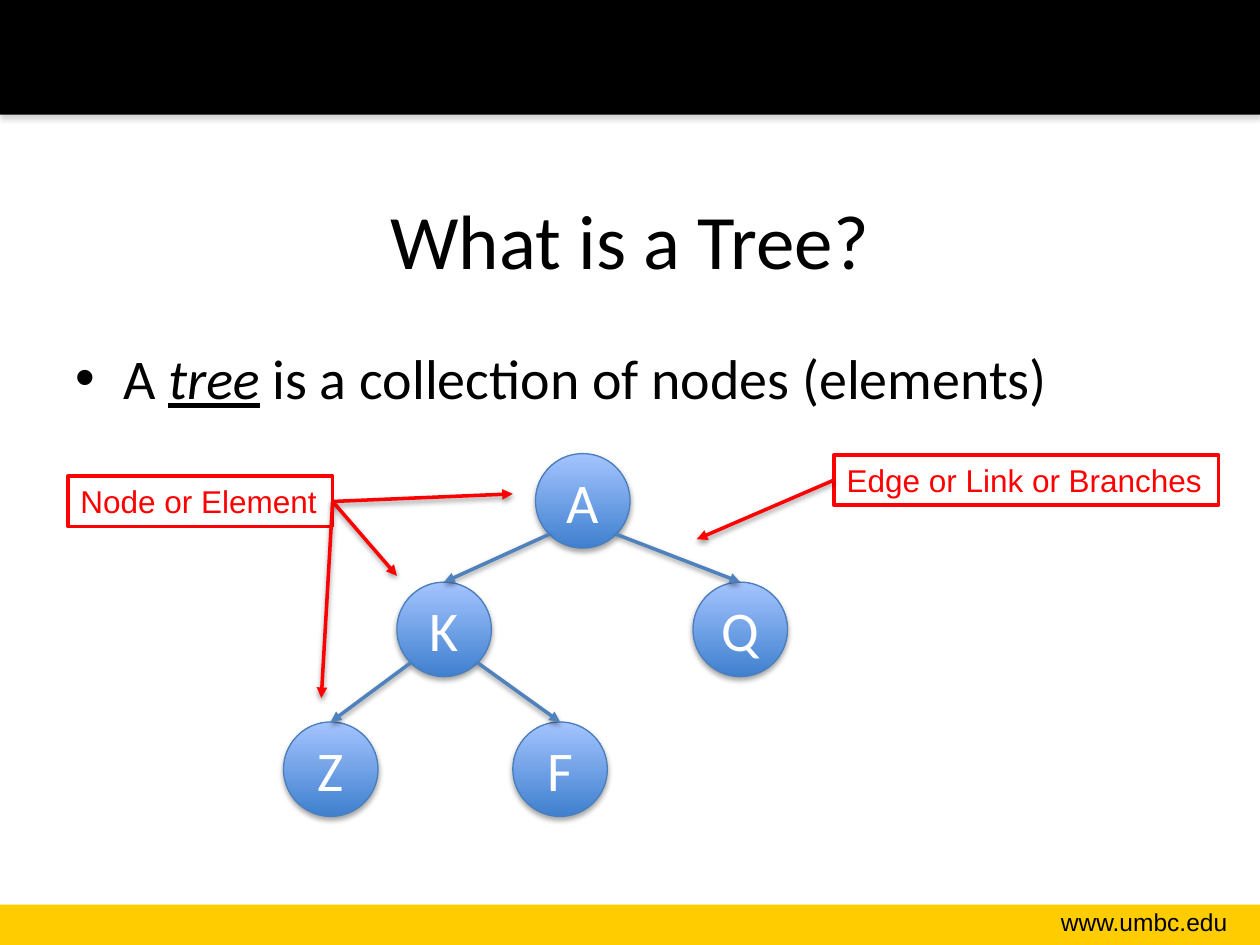
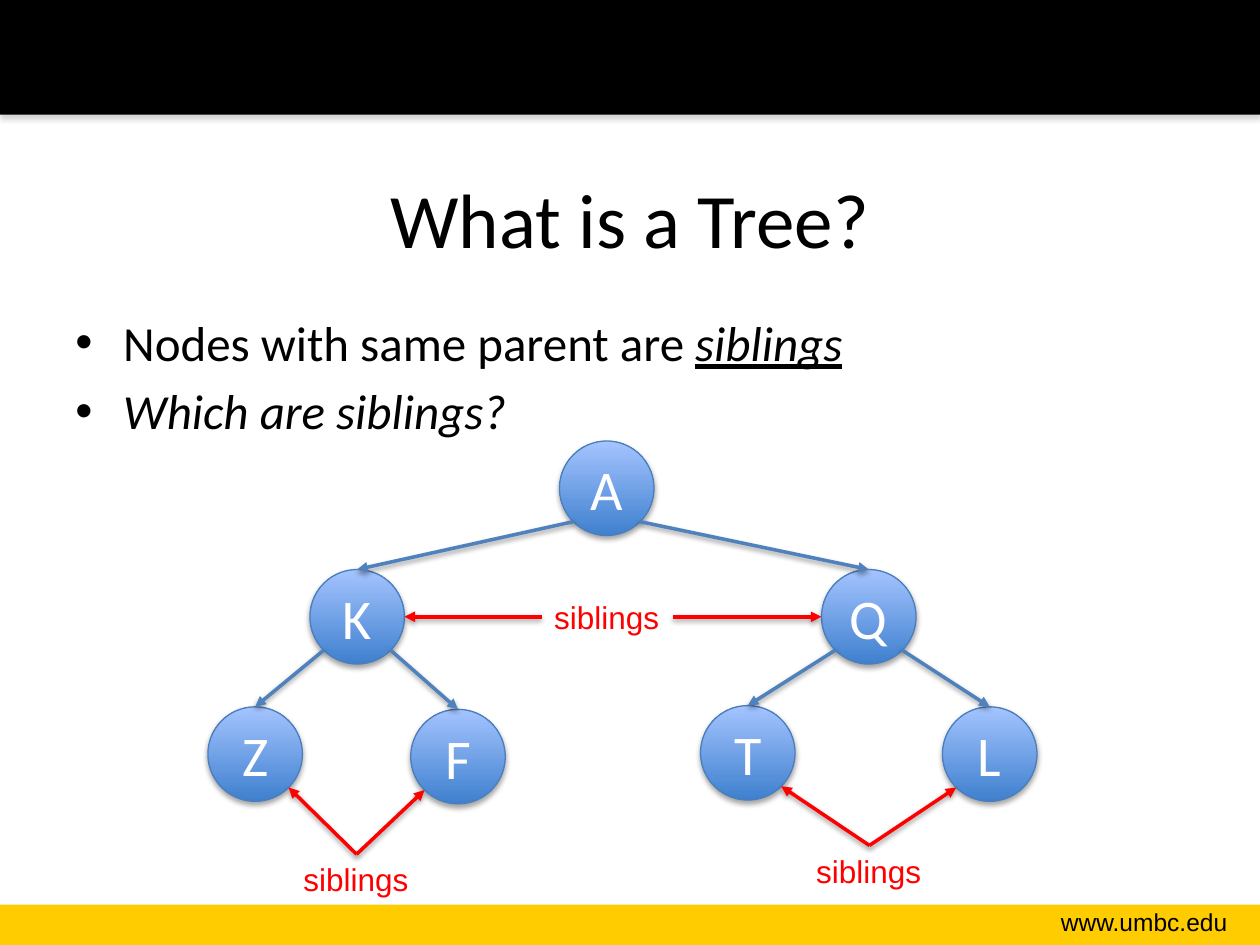
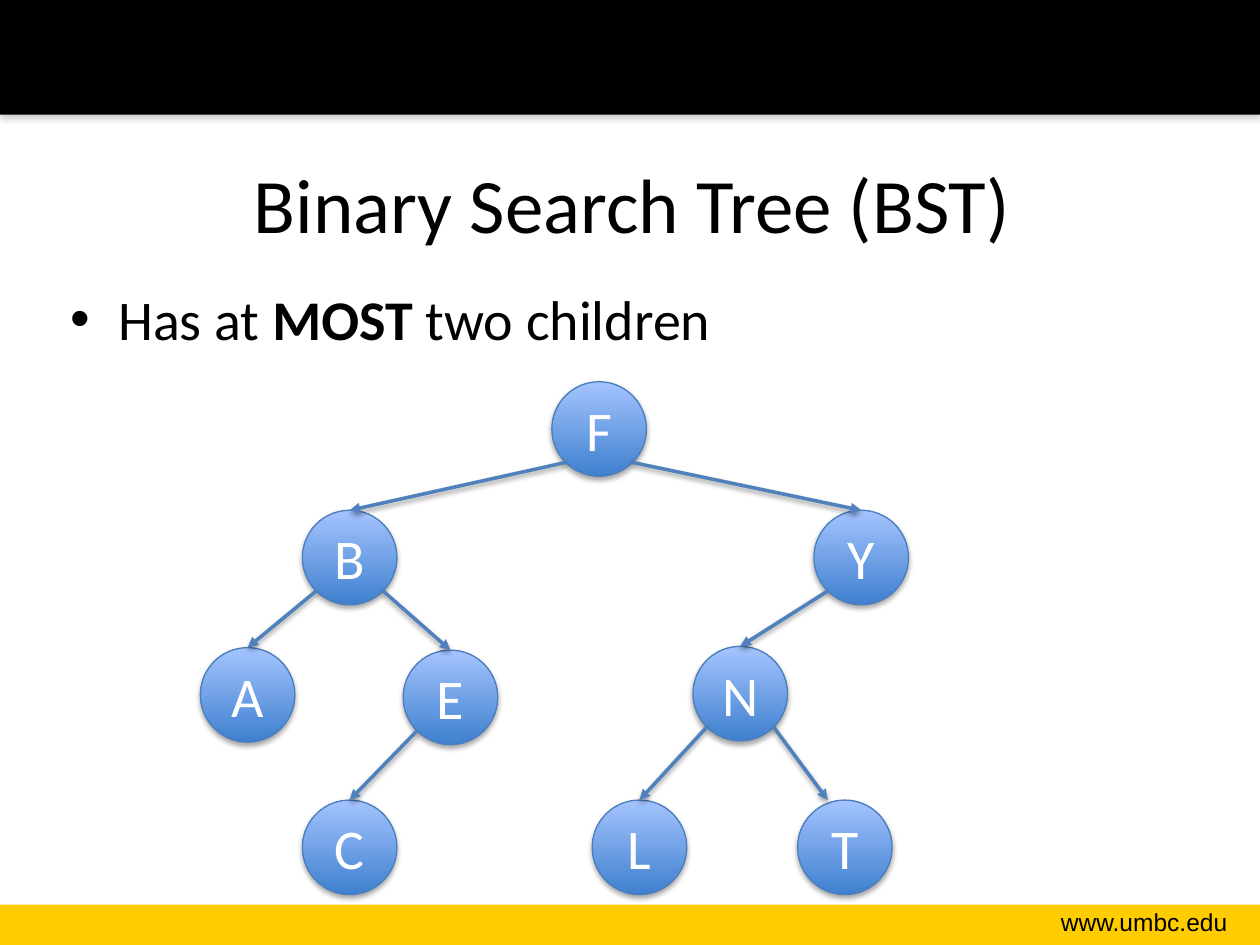
"""Build three slides on trees and binary search trees."""
import math

import lxml.etree
import pptx
import pptx.dml.color
import pptx.enum.shapes
import pptx.enum.text
import pptx.oxml.ns
import pptx.util

COLS, ROWS = 10, 7.5
NODE = 0.75
RADIUS = NODE / 2
DIAGONAL = RADIUS * math.cos(math.pi / 4)
LABEL_H = 0.4
TOP, LEFT, RIGHT = 0, 1, 3
COLORS = {
    "black": "000000", "white": "FFFFFF", "gold": "FFCC00", "grey": "808080",
    "red": "FF0000", "edge": "4F81BD", "outline": "4B7EBC",
    "node_dark": "3F80CE", "node_light": "A4C4FF",
}
LEVELS = [
    (0, 0), (-1.98, 1.02), (2.08, 1.02),
    (-2.79, 2.11), (-1.18, 2.13), (1.12, 2.1),
]


def rgb(name):
    """Return the palette colour called name."""
    return pptx.dml.color.RGBColor.from_string(COLORS[name])


def place_levels(letters, x, y):
    """Map letters to the shared tree layout with its root at x, y."""
    return {c: (x + dx, y + dy) for c, (dx, dy) in zip(letters, LEVELS)}


class Deck:
    """Hold the presentation, its style and the current slide."""

    def __init__(self):
        """Start an empty presentation with a 10 by 7.5 grid."""
        self.prs = pptx.Presentation()
        self.prs.slide_width = pptx.util.Inches(10)
        self.prs.slide_height = pptx.util.Inches(7.5)
        self.s = None

    def x(self, cols):
        """Convert columns to a length."""
        return round(self.prs.slide_width * cols / COLS)

    def y(self, rows):
        """Convert rows to a length."""
        return round(self.prs.slide_height * rows / ROWS)

    def area(self, x, y, w, h):
        """Convert a grid area to lengths."""
        return self.x(x), self.y(y), self.x(w), self.y(h)

    def shadow(self, sp, color="black", alpha=35, dist=1.8):
        """Give a shape or connector a soft shadow below it."""
        spPr = sp._element.spPr
        tag = pptx.oxml.ns.qn
        for old in spPr.findall(tag("a:effectLst")):
            spPr.remove(old)
        effects = lxml.etree.SubElement(spPr, tag("a:effectLst"))
        outer = lxml.etree.SubElement(
            effects, tag("a:outerShdw"), blurRad=str(pptx.util.Pt(3.1)),
            dist=str(pptx.util.Pt(dist)), dir="5400000", rotWithShape="0")
        clr = lxml.etree.SubElement(outer, tag("a:srgbClr"), val=COLORS[color])
        lxml.etree.SubElement(clr, tag("a:alpha"), val=str(alpha * 1000))

    def run(self, p, text, size, color="black", font="Calibri", style=""):
        """Add a run; style may hold b, i and u."""
        r = p.add_run()
        r.text = text
        r.font.name = font
        r.font.size = pptx.util.Pt(size)
        r.font.color.rgb = rgb(color)
        for flag, name in zip("biu", ("bold", "italic", "underline")):
            if flag in style:
                setattr(r.font, name, True)

    def box(self, x, y, w, h, wrap=True):
        """Add a text box."""
        sp = self.s.shapes.add_textbox(*self.area(x, y, w, h))
        sp.text_frame.word_wrap = wrap
        return sp

    def band(self, y, h, color):
        """Add a band across the slide."""
        sp = self.s.shapes.add_shape(
            pptx.enum.shapes.MSO_SHAPE.RECTANGLE, *self.area(0, y, COLS, h))
        sp.shadow.inherit = False
        sp.fill.solid()
        sp.fill.fore_color.rgb = rgb(color)
        sp.line.fill.background()
        return sp

    def slide(self, title, x, y):
        """Start a slide with its bands, footer and title."""
        self.s = self.prs.slides.add_slide(self.prs.slide_layouts[6])
        self.band(7.18, 0.32, "gold")
        self.shadow(self.band(0, 0.91, "black"), "grey")
        p = self.box(7.85, 7.15, 1.99, 0.34).text_frame.paragraphs[0]
        p.alignment = pptx.enum.text.PP_ALIGN.RIGHT
        self.run(p, "www.umbc.edu", 14, font="Arial")
        tf = self.box(x, y, 9, 1.25).text_frame
        tf.vertical_anchor = pptx.enum.text.MSO_ANCHOR.MIDDLE
        p = tf.paragraphs[0]
        p.alignment = pptx.enum.text.PP_ALIGN.CENTER
        self.run(p, title, 44)

    def bullets(self, x, y, size, *items):
        """Add bullets, each a list of (text, style) runs."""
        tf = self.box(x, y, 9, 0.9).text_frame
        for i, item in enumerate(items):
            p = tf.add_paragraph() if i else tf.paragraphs[0]
            pPr = p._p.get_or_add_pPr()
            pPr.set("marL", str(self.x(0.38)))
            pPr.set("indent", str(-self.x(0.38)))
            for tag, key, value in (("a:buFont", "typeface", "Arial"),
                                    ("a:buChar", "char", "•")):
                lxml.etree.SubElement(pPr, pptx.oxml.ns.qn(tag)).set(key, value)
            if i:
                p.space_before = pptx.util.Pt(size * 0.2)
            for text, style in item:
                self.run(p, text, size, style=style)

    def node(self, letter, x, y):
        """Add a tree node."""
        sp = self.s.shapes.add_shape(
            pptx.enum.shapes.MSO_SHAPE.OVAL, *self.area(x, y, NODE, NODE))
        sp.fill.gradient()
        sp.fill.gradient_angle = 90
        for i, color in enumerate(("node_dark", "node_light")):
            stop = sp.fill.gradient_stops[i]
            stop.position = i
            stop.color.rgb = rgb(color)
        sp.line.color.rgb = rgb("outline")
        sp.line.width = pptx.util.Pt(0.75)
        self.shadow(sp)
        tf = sp.text_frame
        tf.vertical_anchor = pptx.enum.text.MSO_ANCHOR.MIDDLE
        p = tf.paragraphs[0]
        p.alignment = pptx.enum.text.PP_ALIGN.CENTER
        self.run(p, letter, 32, "white")
        return sp

    def arrow(self, start, end, color="red"):
        """Add an arrow between two grid points."""
        cx = self.s.shapes.add_connector(
            pptx.enum.shapes.MSO_CONNECTOR.STRAIGHT,
            self.x(start[0]), self.y(start[1]), self.x(end[0]), self.y(end[1]))
        cx.line.color.rgb = rgb(color)
        cx.line.width = pptx.util.Pt(2)
        ln = cx.line._get_or_add_ln()
        lxml.etree.SubElement(ln, pptx.oxml.ns.qn("a:tailEnd"), type="triangle")
        self.shadow(cx, alpha=38, dist=1.6)
        return cx

    def label(self, text, x, y, w, framed=False):
        """Add a red label, with or without a frame."""
        sp = self.box(x, y, w, LABEL_H, wrap=False)
        if framed:
            sp.line.color.rgb = rgb("red")
            sp.line.width = pptx.util.Pt(2)
        self.run(sp.text_frame.paragraphs[0], text, 18, "red", "Arial")
        return sp

    def callout(self, text, x, y, w, side, targets):
        """Add a framed label with arrows from one side to targets."""
        sp = self.label(text, x, y, w, framed=True)
        start = (x + w if side == RIGHT else x, y + LABEL_H / 2)
        for target in targets:
            self.arrow(start, target).begin_connect(sp, side)

    def corner(self, place, toward):
        """Return the lower point of a node's rim on the side of toward."""
        shift = math.copysign(DIAGONAL, toward - place[0])
        return place[0] + RADIUS + shift, place[1] + RADIUS + DIAGONAL

    def tree(self, places, edges):
        """Add nodes at places and an arrow for each parent-child pair."""
        nodes = {c: self.node(c, *place) for c, place in places.items()}
        for parent, child in edges.split():
            x, y = places[child]
            start = self.corner(places[parent], x)
            cx = self.arrow(start, (x + RADIUS, y), "edge")
            cx.end_connect(nodes[child], TOP)

    def siblings(self, places, pair, x, y):
        """Label a pair of sibling nodes from below."""
        self.label("siblings", x - 0.52, y, 1.04)
        for c in pair:
            self.arrow((x, y), self.corner(places[c], x - RADIUS))


def main():
    """Build and save the slides."""
    deck = Deck()

    deck.slide("What is a Tree?", 0.5, 1.27)
    deck.bullets(0.5, 2.68, 32, [
        ("A ", ""), ("tree", "iu"), (" is a collection of nodes (elements)", "")])
    deck.tree({"A": (4.25, 3.6), "K": (3.15, 4.62), "Q": (5.5, 4.62),
               "Z": (2.25, 5.73), "F": (4.07, 5.73)}, "AK AQ KZ KF")
    deck.callout("Node or Element", 0.54, 3.78, 2.1, RIGHT,
                 [(4.07, 3.92), (3.15, 4.57), (2.55, 5.54)])
    deck.callout("Edge or Link or Branches", 6.62, 3.61, 3.05, LEFT,
                 [(5.53, 4.28)])

    deck.slide("What is a Tree?", 0.5, 1.1)
    deck.bullets(0.5, 2.43, 28,
                 [("Nodes with same parent are ", ""), ("siblings", "iu")],
                 [("Which are siblings?", "i")])
    places = place_levels("AKQZFT", 4.44, 3.5)
    places["L"] = (7.48, 5.61)
    deck.tree(places, "AK AQ KZ KF QT QL")
    deck.siblings(places, "ZF", 2.83, 6.78)
    deck.siblings(places, "TL", 6.9, 6.71)
    deck.label("siblings", 4.3, 4.7, 1.04)
    middle = places["K"][1] + RADIUS
    deck.arrow((4.3, middle), (places["K"][0] + NODE, middle))
    deck.arrow((5.34, middle), (places["Q"][0], middle))

    deck.slide("Binary Search Tree (BST)", 0.52, 0.98)
    deck.bullets(0.46, 2.21, 32, [
        ("Has at ", ""), ("MOST", "b"), (" two children", "")])
    places = place_levels("FBYAEN", 4.38, 3.03)
    places.update({c: (x, 6.35) for c, x in zip("CLT", (2.4, 4.7, 6.33))})
    deck.tree(places, "FB FY BA BE YN EC NL")
    deck.arrow(deck.corner(places["N"], places["T"][0]), (6.57, 6.35), "edge")

    deck.prs.save("out.pptx")


if __name__ == "__main__":
    main()
